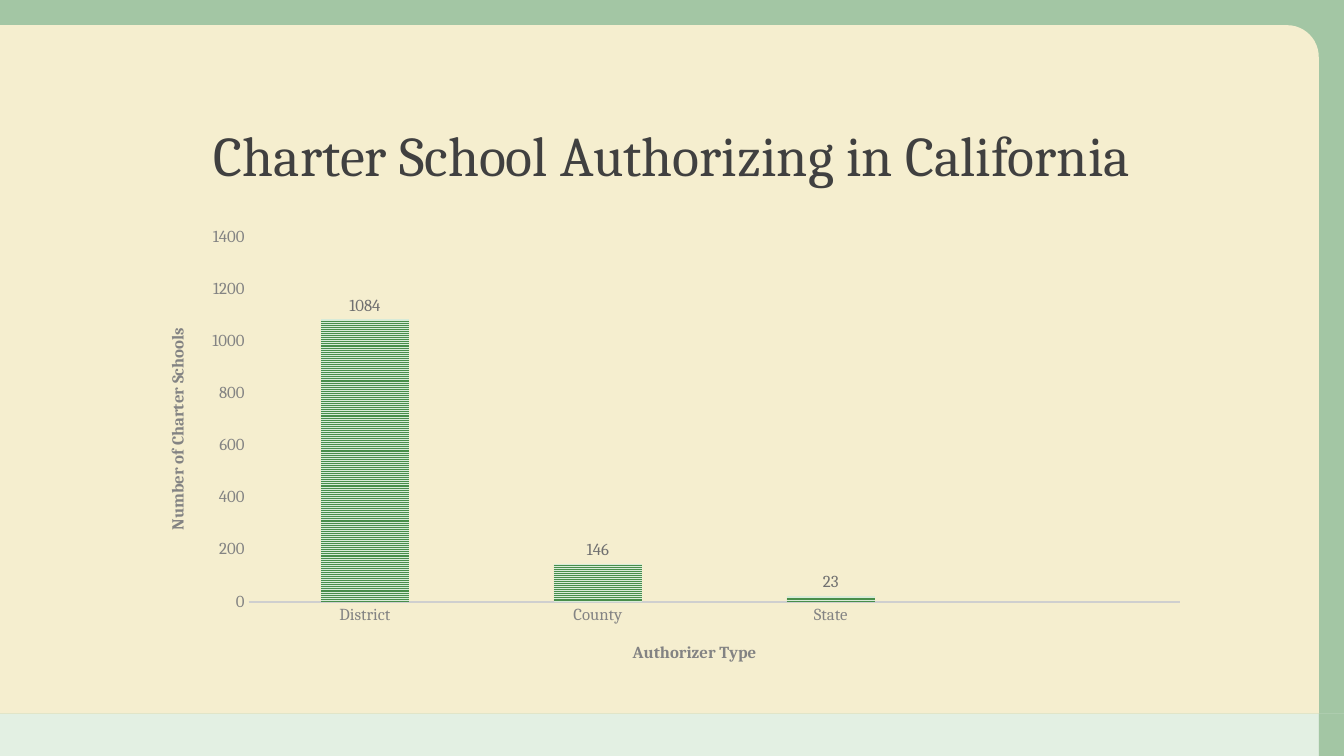
import lxml.etree
import pptx
import pptx.chart.data
import pptx.dml.color
import pptx.enum.chart
import pptx.enum.dml
import pptx.enum.shapes
import pptx.enum.text
import pptx.oxml.ns
import pptx.util

FONT = "Cambria"
WIDTH, HEIGHT = 13.33, 7.5
MARGIN, BAND = 0.25, 0.42
GREEN, MINT, CREAM = "488E4A", "D8EBD8", "F5EECF"
qualified = pptx.oxml.ns.qn


def color(value):
    return pptx.dml.color.RGBColor.from_string(value)


def inches(box):
    return [pptx.util.Inches(length) for length in box]


def style_font(font, size, value, bold=False):
    font.name = FONT
    font.size = pptx.util.Pt(size)
    font.bold = bold
    font.color.rgb = color(value)


def add_panel(slide, box, kind, value, opacity=100):
    shape = slide.shapes.add_shape(kind, *inches(box))
    shape.shadow.inherit = False
    shape.line.fill.background()
    shape.fill.solid()
    shape.fill.fore_color.rgb = color(value)
    if opacity < 100:
        solid = shape.fill._xPr.find(qualified("a:solidFill"))
        lxml.etree.SubElement(solid[0], qualified("a:alpha"), val=str(opacity * 1000))
    return shape


def add_frame(slide, box):
    left, top, width, height = box
    kinds = pptx.enum.shapes.MSO_SHAPE
    inner_width, inner_height = width - MARGIN, height - BAND
    right, bottom = left + inner_width, top + inner_height
    add_panel(slide, (left, bottom, inner_width, BAND), kinds.RECTANGLE, MINT, 70)
    add_panel(slide, (right, bottom, MARGIN, BAND), kinds.RECTANGLE, GREEN, 50)
    add_panel(slide, (left, top, width, inner_height), kinds.RECTANGLE, GREEN, 50)
    page = add_panel(slide, (left, top + MARGIN, inner_width, inner_height - MARGIN),
                     kinds.ROUND_1_RECTANGLE, CREAM)
    page.adjustments[0] = 0.046


def add_title(slide, box, text):
    frame = slide.shapes.add_textbox(*inches(box)).text_frame
    frame.word_wrap = True
    frame.vertical_anchor = pptx.enum.text.MSO_ANCHOR.BOTTOM
    paragraph = frame.paragraphs[0]
    paragraph.alignment = pptx.enum.text.PP_ALIGN.CENTER
    paragraph.line_spacing = 0.9
    run = paragraph.add_run()
    run.text = text
    style_font(run.font, 40, "404040")


def set_layout(parent, position, **settings):
    for existing in parent.findall(qualified("c:layout")):
        parent.remove(existing)
    layout = parent.makeelement(qualified("c:layout"))
    parent.insert(position, layout)
    manual = lxml.etree.SubElement(layout, qualified("c:manualLayout"))
    for name, value in settings.items():
        lxml.etree.SubElement(manual, qualified("c:" + name), val=str(value))


def style_axis(axis, title, left, top):
    axis.has_major_gridlines = False
    axis.major_tick_mark = pptx.enum.chart.XL_TICK_MARK.NONE
    axis.minor_tick_mark = pptx.enum.chart.XL_TICK_MARK.NONE
    style_font(axis.tick_labels.font, 12, "838383")
    run = axis.axis_title.text_frame.paragraphs[0].add_run()
    run.text = title
    style_font(run.font, 12, "838383", True)
    set_layout(axis.axis_title._element, 1, xMode="edge", yMode="edge", x=left, y=top)


def add_authorizer_chart(slide, box):
    data = pptx.chart.data.CategoryChartData()
    data.categories = ["District", "County", "State", ""]
    data.add_series("Series 1", [1084, 146, 23, None])
    chart = slide.shapes.add_chart(
        pptx.enum.chart.XL_CHART_TYPE.COLUMN_CLUSTERED, *inches(box), data).chart
    chart.has_legend = False
    chart.has_title = False
    style_font(chart.font, 10, "404040")

    style_axis(chart.category_axis, "Authorizer Type", 0.46, 0.91)
    line = chart.category_axis.format.line
    line.color.rgb = color("CFCFCF")
    line.width = pptx.util.Pt(1.5)

    value_axis = chart.value_axis
    style_axis(value_axis, "Number of Charter Schools", 0.02, 0.23)
    value_axis.minimum_scale, value_axis.maximum_scale = 0, 1400
    value_axis.major_unit = 200
    value_axis.format.line.fill.background()

    plot = chart.plots[0]
    plot.vary_by_categories = False
    plot.gap_width, plot.overlap = 164, -22
    set_layout(chart._chartSpace.chart.plotArea, 0, layoutTarget="inner",
               xMode="edge", yMode="edge", x=0.1, y=0.04, w=0.88, h=0.79)

    series = plot.series[0]
    series.invert_if_negative = False
    series.format.line.fill.background()
    fill = series.format.fill
    fill.patterned()
    fill.pattern = pptx.enum.dml.MSO_PATTERN.NARROW_HORIZONTAL
    fill.fore_color.rgb = color(GREEN)
    fill.back_color.rgb = color(MINT)

    labels = series.data_labels
    labels.show_value = True
    labels.position = pptx.enum.chart.XL_LABEL_POSITION.OUTSIDE_END
    style_font(labels.font, 12, "707070")


def main():
    presentation = pptx.Presentation()
    presentation.slide_width, presentation.slide_height = inches((WIDTH, HEIGHT))
    slide = presentation.slides.add_slide(presentation.slide_layouts[6])
    content_width = 10.5
    content_left = (WIDTH - content_width) / 2
    add_frame(slide, (0, 0, WIDTH, HEIGHT))
    add_title(slide, (content_left, 0.62, content_width, 1.3),
              "Charter School Authorizing in California")
    add_authorizer_chart(slide, (content_left, 2.17, content_width, 4.58))
    presentation.save("out.pptx")


if __name__ == "__main__":
    main()
